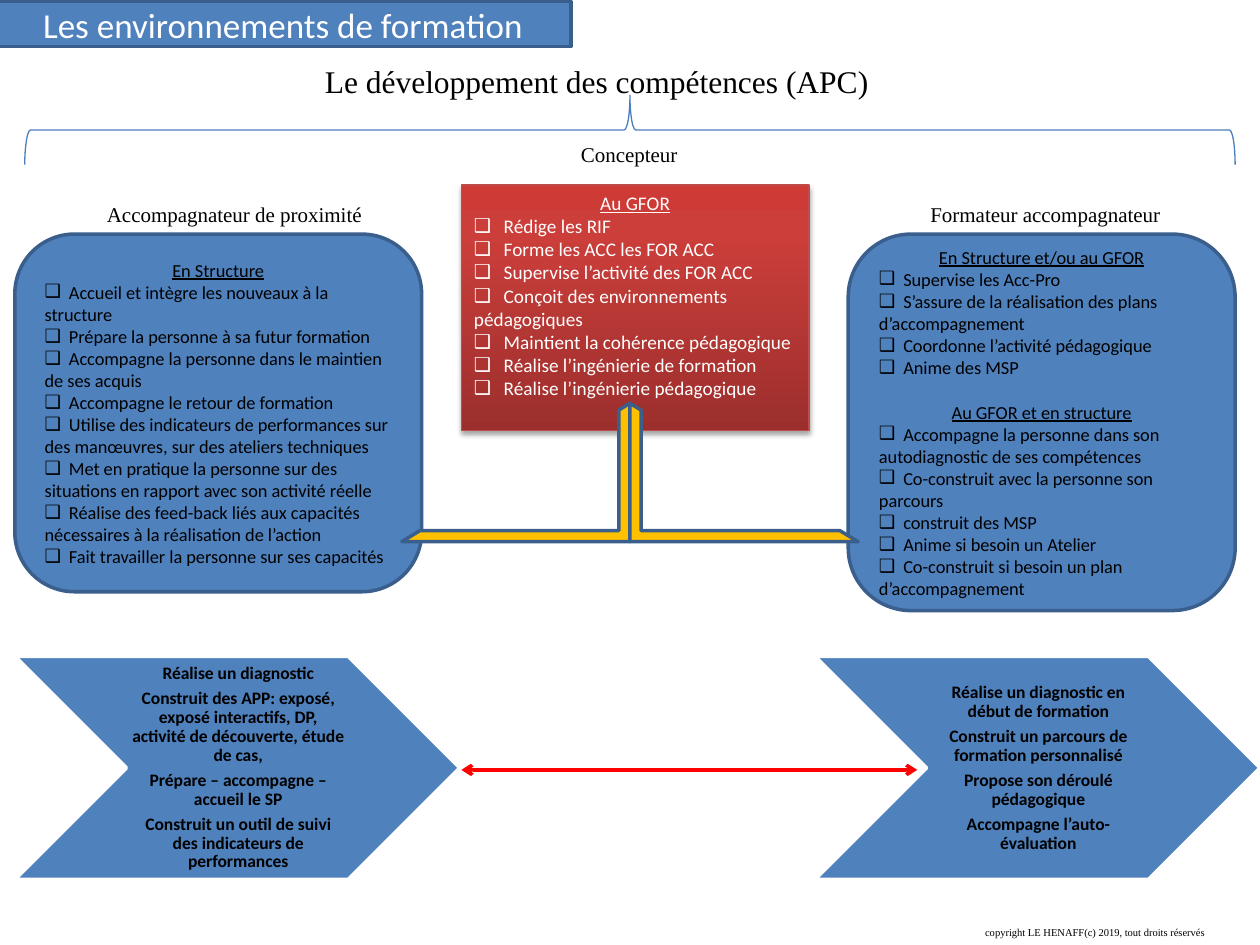
from copy import deepcopy
from dataclasses import dataclass

from lxml.etree import SubElement
from pptx import Presentation
from pptx.dml.color import RGBColor
from pptx.enum.shapes import MSO_CONNECTOR as Line, MSO_SHAPE as Form
from pptx.enum.text import MSO_ANCHOR as Anchor, MSO_AUTO_SIZE as AutoSize, PP_ALIGN as Align
from pptx.oxml.ns import qn
from pptx.util import Cm, Pt


@dataclass(frozen=True)
class Theme:
    blue: str = "4F81BD"
    edge: str = "3A5F8C"
    brace: str = "4B7EBC"
    gold: str = "FFC000"
    red: str = "FF0000"
    panel_edge: str = "BF4C48"
    panel_stops: tuple = ((0, "9C2F2D"), (0.8, "CB3E3A"), (1, "CE3B37"))
    black: str = "000000"
    white: str = "FFFFFF"
    sans: str = "Calibri"
    serif: str = "Times New Roman"
    title: float = 20
    heading: float = 18
    label: float = 12
    panel: float = 11
    card: float = 10.5
    step: float = 10
    note: float = 6


THEME = Theme()


@dataclass(frozen=True)
class Box:
    left: float
    top: float
    width: float
    height: float

    def lengths(self):
        return [Cm(value) for value in (self.left, self.top, self.width, self.height)]


def rgb(color):
    return RGBColor.from_string(color)


def add_text(frame, text, size, color=THEME.black, font=THEME.sans, align=Align.LEFT,
             bold=False, underline=False, bullet_gap=None, before=0, after=0, spacing=1.0):
    first = frame.paragraphs[0]
    para = frame.add_paragraph() if first.runs else first
    para.alignment = align
    para.space_before, para.space_after = Pt(before), Pt(after)
    para.line_spacing = spacing
    props = para._p.get_or_add_pPr()
    props.set("marL", "0")
    props.set("indent", "0")
    if bullet_gap:
        SubElement(props, qn("a:buFont"), typeface=font)
        SubElement(props, qn("a:buChar"), char="❑")
        tabs = SubElement(props, qn("a:tabLst"))
        SubElement(tabs, qn("a:tab"), pos=str(Cm(bullet_gap)), algn="l")
        text = "\t" + text
    else:
        SubElement(props, qn("a:buNone"))
    span = para.add_run()
    span.text = text
    span.font.size, span.font.name = Pt(size), font
    span.font.bold, span.font.underline = bold, underline
    span.font.color.rgb = rgb(color)


def paint(shape, fill, line, width):
    shape.shadow.inherit = False
    if fill:
        shape.fill.solid()
        shape.fill.fore_color.rgb = rgb(fill)
    else:
        shape.fill.background()
    shape.line.color.rgb = rgb(line)
    shape.line.width = Pt(width)


def add_form(page, form, box, fill, line, width=2):
    shape = page.shapes.add_shape(form, *box.lengths())
    paint(shape, fill, line, width)
    return shape


def add_label(page, box, text, size, align=Align.LEFT):
    frame = page.shapes.add_textbox(*box.lengths()).text_frame
    frame.word_wrap = True
    add_text(frame, text, size, font=THEME.serif, align=align)


def place(holder, box):
    holder.left, holder.top, holder.width, holder.height = box.lengths()
    holder.text_frame.auto_size = AutoSize.NONE
    return holder.text_frame


def fill_title(page, box, text):
    frame = place(page.shapes.title, box)
    frame.vertical_anchor = Anchor.MIDDLE
    paint(page.shapes.title, THEME.blue, THEME.edge, 2)
    add_text(frame, text, THEME.title, THEME.white, align=Align.CENTER)


def add_heading(page, box, text):
    add_label(page, Box(box.left + 5.8, box.top, 12.19, 1.02), text, THEME.heading)
    depth = 1.4
    offset = (box.width - depth) / 2
    brace_top = box.top + box.height - depth
    turned = Box(box.left + offset, brace_top - offset, depth, box.width)
    add_form(page, Form.RIGHT_BRACE, turned, None, THEME.brace, 0.75).rotation = 270


def fill_designer(page, box, label, heading, tasks):
    add_label(page, Box(box.left + 1.19, box.top - 1.01, 4.39, 0.76), label, THEME.label, Align.CENTER)
    panel = page.placeholders[1]
    frame = place(panel, box)
    frame.vertical_anchor = Anchor.TOP
    paint(panel, None, THEME.panel_edge, 0.75)
    panel.fill.gradient()
    panel.fill.gradient_angle = 90
    props = panel._element.spPr
    stops = props.find(qn("a:gradFill")).find(qn("a:gsLst"))
    stops.append(deepcopy(stops[0]))
    for stop, (position, color) in zip(panel.fill.gradient_stops, THEME.panel_stops):
        stop.position = position
        stop.color.rgb = rgb(color)
    shadow = SubElement(props.find(qn("a:effectLst")), qn("a:outerShdw"), blurRad=str(Pt(3.1)),
                        dist=str(Pt(1.8)), dir="5400000", rotWithShape="0")
    shade = SubElement(shadow, qn("a:srgbClr"), val=THEME.black)
    SubElement(shade, qn("a:alpha"), val="35000")
    add_text(frame, heading, THEME.panel, THEME.white, align=Align.CENTER, underline=True)
    for task in tasks:
        add_text(frame, task, THEME.panel, THEME.white, bullet_gap=0.6)


def add_role(page, box, label, sections):
    label_width = 5.79
    label_left = box.left + (box.width - label_width) / 2 + 0.4
    add_label(page, Box(label_left, box.top - 0.78, label_width, 0.76), label, THEME.label)
    frame = add_form(page, Form.ROUNDED_RECTANGLE, box, THEME.blue, THEME.edge).text_frame
    frame.word_wrap = True
    frame.vertical_anchor = Anchor.MIDDLE
    for index, (heading, tasks) in enumerate(sections):
        add_text(frame, heading, THEME.card, align=Align.CENTER, underline=True,
                 before=13 if index else 0)
        for task in tasks:
            add_text(frame, task, THEME.card, bullet_gap=0.49)


def add_steps(page, box, steps):
    add_form(page, Form.CHEVRON, box, THEME.blue, THEME.white)
    inner = Box(box.left + box.width / 4, box.top, box.width / 2 - 0.04, box.height)
    frame = page.shapes.add_textbox(*inner.lengths()).text_frame
    frame.word_wrap = True
    frame.vertical_anchor = Anchor.MIDDLE
    frame.margin_left = Cm(0.1)
    frame.margin_top = frame.margin_right = frame.margin_bottom = Cm(0.03)
    for step in steps:
        add_text(frame, step, THEME.step, align=Align.CENTER, bold=True, after=3.5, spacing=0.9)


def add_branches(page, box):
    length, height = box.width / 2, box.height
    for side, flipped in enumerate((True, False)):
        turned = Box(box.left + side * length + (length - height) / 2,
                     box.top + (height - length) / 2, height, length)
        branch = add_form(page, Form.HALF_FRAME, turned, THEME.gold, THEME.edge)
        branch.rotation = 270
        branch.adjustments[0], branch.adjustments[1] = 0.08, 0.08
        if flipped:
            branch._element.spPr.xfrm.set("flipV", "1")


def add_exchange(page, box):
    arrow = page.shapes.add_connector(Line.STRAIGHT, Cm(box.left), Cm(box.top),
                                      Cm(box.left + box.width), Cm(box.top + box.height))
    arrow.line.color.rgb = rgb(THEME.red)
    arrow.line.width = Pt(2)
    for end in ("a:headEnd", "a:tailEnd"):
        SubElement(arrow.line._get_or_add_ln(), qn(end), type="arrow")
    SubElement(arrow._element.spPr, qn("a:effectLst"))


def main():
    deck = Presentation()
    deck.slide_width, deck.slide_height = Cm(25.4), Cm(19.05)
    page = deck.slides.add_slide(deck.slide_layouts[1])
    add_steps(page, Box(0.3, 13.23, 8.97, 4.5), [
        "Réalise un diagnostic",
        "Construit des APP: exposé, exposé interactifs, DP, activité de découverte, étude de cas,",
        "Prépare – accompagne – accueil le SP",
        "Construit un outil de suivi des indicateurs de performances"])
    add_steps(page, Box(16.43, 13.23, 8.97, 4.5), [
        "Réalise un diagnostic en début de formation",
        "Construit un parcours de formation personnalisé",
        "Propose son déroulé pédagogique", "Accompagne l’auto-évaluation"])
    fill_title(page, Box(-0.1, 0.03, 11.61, 0.91), "Les environnements de formation")
    add_label(page, Box(19.61, 18.54, 5.79, 0.51),
              "copyright LE HENAFF(c) 2019, tout droits réservés", THEME.note)
    add_heading(page, Box(0.5, 1.12, 24.4, 2.2), "Le développement des compétences (APC)")
    add_role(page, Box(0.3, 4.72, 8.2, 7.21), "Accompagnateur de proximité", [("En Structure", [
        "Accueil et intègre les nouveaux à la structure",
        "Prépare la personne à sa futur formation",
        "Accompagne la personne dans le maintien de ses acquis",
        "Accompagne le retour de formation",
        "Utilise des indicateurs de performances sur des manœuvres, sur des ateliers techniques",
        "Met en pratique la personne sur des situations en rapport avec son activité réelle",
        "Réalise des feed-back liés aux capacités nécessaires à la réalisation de l’action",
        "Fait travailler la personne sur ses capacités"])])
    add_role(page, Box(17.1, 4.72, 7.8, 7.59), "Formateur accompagnateur", [
        ("En Structure et/ou au GFOR", [
            "Supervise les Acc-Pro", "S’assure de la réalisation des plans d’accompagnement",
            "Coordonne l’activité pédagogique", "Anime des MSP"]),
        ("Au GFOR et en structure", [
            "Accompagne la personne dans son autodiagnostic de ses compétences",
            "Co-construit avec la personne son parcours", "construit des MSP",
            "Anime si besoin un Atelier", "Co-construit si besoin un plan d’accompagnement"])])
    fill_designer(page, Box(9.3, 3.73, 7.01, 4.95), "Concepteur", "Au GFOR", [
        "Rédige les RIF", "Forme les ACC les FOR ACC", "Supervise l’activité des FOR ACC",
        "Conçoit des environnements pédagogiques", "Maintient la cohérence pédagogique",
        "Réalise l’ingénierie de formation", "Réalise l’ingénierie pédagogique"])
    add_branches(page, Box(8.1, 8.13, 9.2, 2.79))
    add_exchange(page, Box(9.3, 15.52, 9.19, 0))
    deck.save("out.pptx")


if __name__ == "__main__":
    main()
